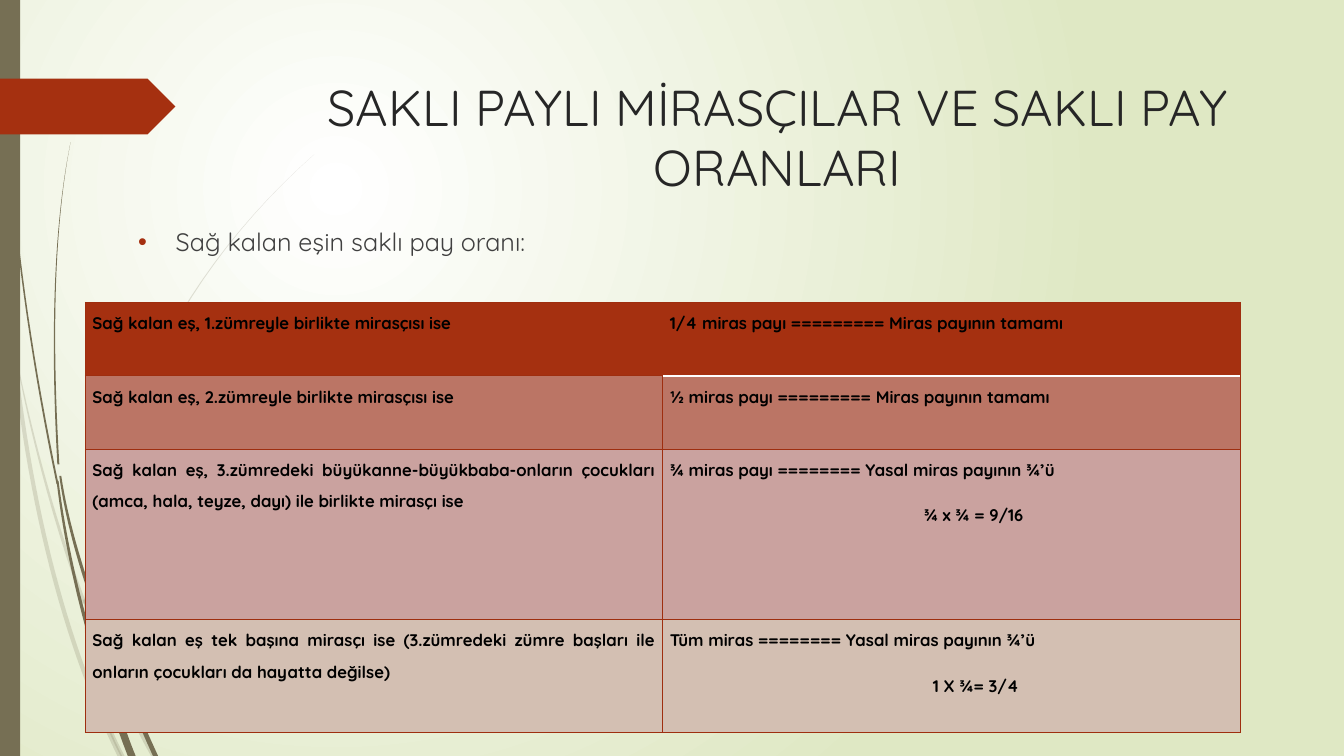
from lxml import etree
from pptx import Presentation
from pptx.dml.color import RGBColor
from pptx.enum.shapes import MSO_SHAPE
from pptx.enum.text import MSO_ANCHOR, PP_ALIGN
from pptx.oxml.ns import qn
from pptx.util import Cm, Pt

FONT = "Quicksand"
OLIVE, RUST, BORDER, WHITE = "766F54", "A53010", "9E2E0F", "FFFFFF"
WISP_STEPS = 24


def paint(fill, color):
    fill.solid()
    fill.fore_color.rgb = RGBColor.from_string(color)


def add_run(p, text, size, color, bold=False):
    r = p.add_run()
    r.text = text
    r.font.name = FONT
    r.font.size = Pt(size)
    r.font.bold = bold
    r.font.color.rgb = RGBColor.from_string(color)


prs = Presentation()
prs.slide_width, prs.slide_height = Cm(33.87), Cm(19.05)
s = prs.slides.add_slide(prs.slide_layouts[6])

fill = s.background.fill
fill.gradient()
for stop, color, position in zip(fill.gradient_stops, [WHITE, "DFE8C4"], [0, 1]):
    stop.color.rgb = RGBColor.from_string(color)
    stop.position = position
grad = s.element.find(".//" + qn("a:gradFill"))
grad.remove(grad.find(qn("a:lin")))
circle = etree.SubElement(grad, qn("a:path"), path="circle")
etree.SubElement(circle, qn("a:fillToRect"), l="50000", t="50000", r="100000", b="100000")

PALE, SOLID = 20, 100
wisps = [
    (PALE, (0, 7.37), (0.2, 8.5), (0.43, 9.55), 0.1, 0.1),
    (PALE, (0.43, 9.55), (1.42, 14.73), (3.02, 19.05), 0.1, 0.12),
    (PALE, (0.36, 8.76), (1.14, 12.12), (2.13, 15.21), 0.02, 0.1),
    (PALE, (2.13, 15.11), (2.92, 17.15), (3.87, 19.05), 0.1, 0.13),
    (PALE, (7.92, 3.89), (4.04, 8.84), (2.21, 14.99), 0, 0.08),
    (PALE, (2.18, 14.88), (2.34, 17.02), (3.09, 19.05), 0.08, 0.1),
    (SOLID, (0.08, 0), (0.43, 5.92), (1.45, 12.2), 0.02, 0.05),
    (SOLID, (1.78, 3.58), (1.4, 7.11), (1.47, 11.7), 0, 0.05),
    (SOLID, (1.45, 12.12), (2.11, 15.49), (3.28, 19.05), 0.05, 0.12),
    (SOLID, (1.52, 11.99), (2.3, 15.04), (3.92, 19.05), 0.05, 0.13),
    (SOLID, (6.61, 8.74), (3.99, 12.06), (2.75, 16.2), 0, 0.1),
    (SOLID, (2.75, 16.2), (2.87, 17.5), (3.37, 19.05), 0.1, 0.1),
]
for opacity, start, middle, end, start_width, end_width in wisps:
    control = [2 * m - (a + b) / 2 for a, m, b in zip(start, middle, end)]
    left_edge, right_edge = [], []
    for step in range(WISP_STEPS + 1):
        t = step / WISP_STEPS
        x, y = [(1 - t) ** 2 * a + 2 * t * (1 - t) * c + t ** 2 * b
                for a, c, b in zip(start, control, end)]
        half = (start_width + (end_width - start_width) * t) / 2
        left_edge.append((Cm(x - half), Cm(y)))
        right_edge.append((Cm(x + half), Cm(y)))
    points = left_edge + right_edge[::-1]
    outline = s.shapes.build_freeform(*points[0])
    outline.add_line_segments(points[1:], close=True)
    sp = outline.convert_to_shape()
    sp.shadow.inherit = False
    paint(sp.fill, OLIVE)
    sp.line.fill.background()
    if opacity < SOLID:
        clr = sp.element.spPr.find(".//" + qn("a:srgbClr"))
        etree.SubElement(clr, qn("a:alpha"), val=str(opacity * 1000))

for kind, top, width, height, color in [
    (MSO_SHAPE.RECTANGLE, 0, 0.51, 19.05, OLIVE),
    (MSO_SHAPE.PENTAGON, 1.98, 4.42, 1.41, RUST),
]:
    sp = s.shapes.add_shape(kind, 0, Cm(top), Cm(width), Cm(height))
    sp.shadow.inherit = False
    paint(sp.fill, color)
    sp.line.fill.background()

title = s.shapes.add_textbox(Cm(7.21), Cm(1.65), Cm(24.77), Cm(3.56))
tf = title.text_frame
tf.word_wrap = True
tf.vertical_anchor = MSO_ANCHOR.MIDDLE
p = tf.paragraphs[0]
p.alignment = PP_ALIGN.CENTER
add_run(p, "SAKLI PAYLI MİRASÇILAR VE SAKLI PAY ORANLARI", 36, "262626")

body = s.shapes.add_textbox(Cm(3.23), Cm(5.58), Cm(27.18), Cm(1.5))
tf = body.text_frame
tf.word_wrap = True
p = tf.paragraphs[0]
pPr = p._p.get_or_add_pPr()
pPr.set("marL", str(Cm(0.95)))
pPr.set("indent", str(-Cm(0.95)))
bullet_color = etree.SubElement(pPr, qn("a:buClr"))
etree.SubElement(bullet_color, qn("a:srgbClr"), val=RUST)
etree.SubElement(pPr, qn("a:buFont"), typeface="Arial")
etree.SubElement(pPr, qn("a:buChar"), char="•")
add_run(p, "Sağ kalan eşin saklı pay oranı:", 18, "404040")

rows = [
    (1.85, RUST, 0,
     ["Sağ kalan eş, 1.zümreyle birlikte mirasçısı ise"],
     ["1/4 miras payı ========= Miras payının tamamı"]),
    (1.85, "BB7565", 0,
     ["Sağ kalan eş, 2.zümreyle birlikte mirasçısı ise"],
     ["½ miras payı ========= Miras payının tamamı"]),
    (4.29, "CAA29F", 6.4,
     ["Sağ kalan eş, 3.zümredeki büyükanne-büyükbaba-onların çocukları "
      "(amca, hala, teyze, dayı) ile birlikte mirasçı ise"],
     ["¾ miras payı ======== Yasal miras payının ¾’ü", "¾ x ¾ = 9/16"]),
    (2.85, "D3BFB2", 6.63,
     ["Sağ kalan eş tek başına mirasçı ise (3.zümredeki zümre başları ile "
      "onların çocukları da hayatta değilse)"],
     ["Tüm miras ======== Yasal miras payının ¾’ü", "1 X ¾= 3/4"]),
]
HEIR, SHARE = 0, 1
white_edges = [(0, SHARE, "B"), (1, SHARE, "T")]
open_edges = [(0, HEIR, "R"), (0, SHARE, "L")]

table = s.shapes.add_table(len(rows), 2, Cm(2.15), Cm(7.62), Cm(29.1), Cm(10.84)).table
for i, (height, color, result_indent, heir, share) in enumerate(rows):
    table.rows[i].height = Cm(height)
    for j, lines in [(HEIR, heir), (SHARE, share)]:
        cell = table.cell(i, j)
        paint(cell.fill, color)
        cell.margin_left = cell.margin_right = Cm(0.18)
        cell.margin_top = cell.margin_bottom = 0
        tf = cell.text_frame
        for n, line in enumerate(lines):
            p = tf.add_paragraph() if n else tf.paragraphs[0]
            p.alignment = PP_ALIGN.JUSTIFY
            p.line_spacing = 1.5
            p.space_after = Pt(10)
            if n:
                p._p.get_or_add_pPr().set("marL", str(Cm(result_indent)))
            add_run(p, line, 12, "000000", True)
        tcPr = cell._tc.get_or_add_tcPr()
        for k, side in enumerate("LRTB"):
            white = (i, j, side) in white_edges
            ln = etree.Element(qn("a:ln" + side), w=str(Pt(1.25 if white else 0.75)))
            if (i, j, side) in open_edges:
                etree.SubElement(ln, qn("a:noFill"))
            else:
                solid = etree.SubElement(ln, qn("a:solidFill"))
                etree.SubElement(solid, qn("a:srgbClr"), val=WHITE if white else BORDER)
            tcPr.insert(k, ln)

prs.save("out.pptx")
